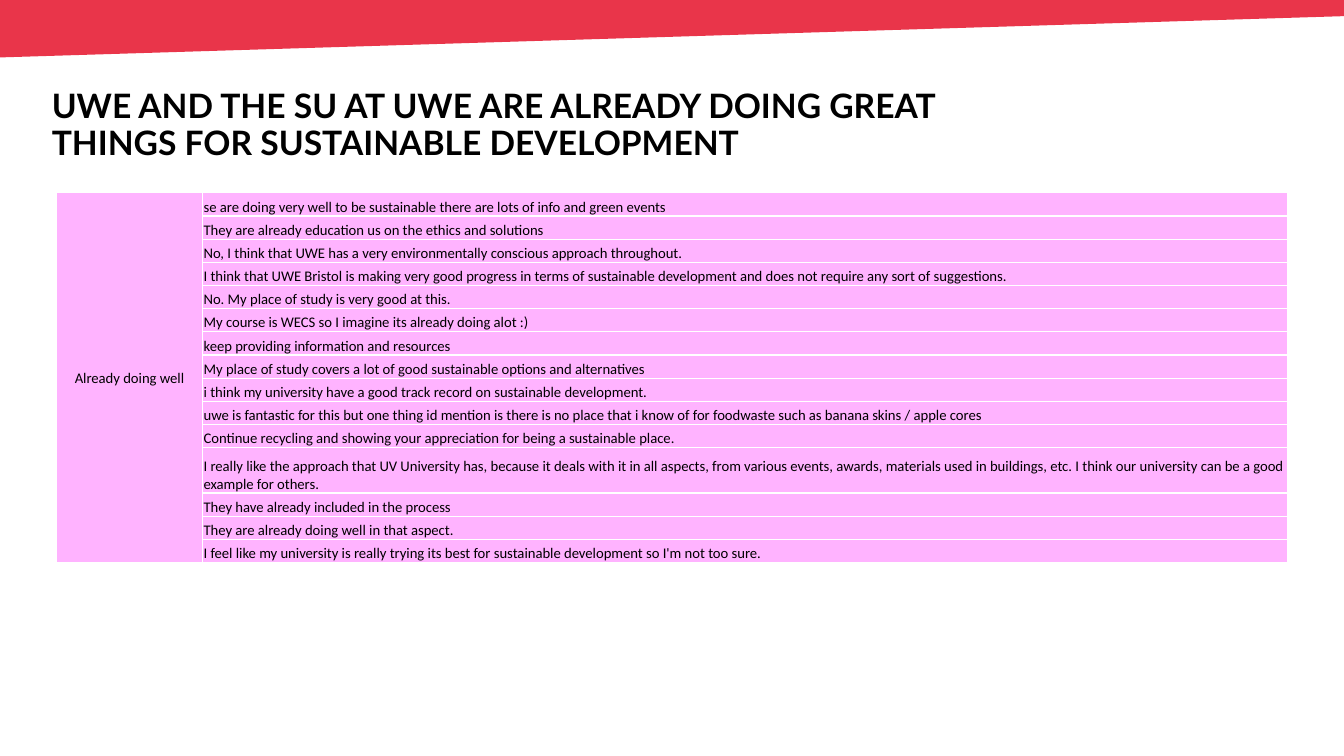
"""Build the slide of comments on what the university already does well."""
from pptx import Presentation
from pptx import util as u
from pptx.dml.color import RGBColor
from pptx.enum import text
from pptx.oxml import parse_xml
from pptx.oxml.ns import nsdecls

WIDTH, HEIGHT = u.Inches(13.33), u.Inches(7.5)
RED = RGBColor(0xE9, 0x35, 0x4A)
PINK = RGBColor(0xFF, 0xB3, 0xFF)
BLACK = RGBColor(0, 0, 0)
WHITE = RGBColor(0xFF, 0xFF, 0xFF)

TITLE = "UWE AND THE SU AT UWE ARE ALREADY DOING GREAT THINGS FOR SUSTAINABLE DEVELOPMENT"
TITLE_FONT = {"name": "Lato", "size": u.Pt(24), "bold": True}
CELL_FONT = {"name": "Calibri", "size": u.Pt(10.5), "bold": False}
CELL_FORMAT = {
    "margin_left": u.Inches(0.01),
    "margin_right": u.Inches(0.01),
    "margin_top": u.Inches(0.01),
    "margin_bottom": 0,
}
BAND_CORNERS = [(-0.01, 0), (0, 0.57), (13.35, 0.16), (13.33, 0)]
COLUMN_WIDTHS = (1.45, 10.76)
ROW_HEIGHT, TALL_ROW_HEIGHT = 0.23, 0.45
LINE_LENGTH = 150

THEME = "Already doing well"
COMMENTS = [
    "se are doing very well to be sustainable there are lots of info and green events",
    "They are already education us on the ethics and solutions",
    "No, I think that UWE has a very environmentally conscious approach throughout.",
    "I think that UWE Bristol is making very good progress in terms of sustainable "
    "development and does not require any sort of suggestions.",
    "No. My place of study is very good at this.",
    "My course is WECS so I imagine its already doing alot :)",
    "keep providing information and resources",
    "My place of study covers a lot of good sustainable options and alternatives",
    "i think my university have a good track record on sustainable development.",
    "uwe is fantastic for this but one thing id mention is there is no place that i know of "
    "for foodwaste such as banana skins / apple cores",
    "Continue recycling and showing your appreciation for being a sustainable place.",
    "I really like the approach that UV University has, because it deals with it in all "
    "aspects, from various events, awards, materials used in buildings, etc. I think our "
    "university can be a good example for others.",
    "They have already included in the process",
    "They are already doing well in that aspect.",
    "I feel like my university is really trying its best for sustainable development so "
    "I'm not too sure.",
]


def apply(target, values):
    """Set every attribute named in a dict of format values."""
    for name, value in values.items():
        setattr(target, name, value)


def write(frame, words, font, align=text.PP_ALIGN.LEFT):
    """Put one formatted paragraph into a text frame."""
    para = frame.paragraphs[0]
    para.alignment = align
    span = para.add_run()
    span.text = words
    apply(span.font, font)
    span.font.color.rgb = BLACK
    return para


def add_band(page):
    """Draw the slanted band along the top edge."""
    corners = [(u.Inches(x), u.Inches(y)) for x, y in BAND_CORNERS]
    builder = page.shapes.build_freeform(*corners[0])
    builder.add_line_segments(corners[1:], close=True)
    band = builder.convert_to_shape()
    band.shadow.inherit = False
    band.fill.solid()
    band.fill.fore_color.rgb = RED
    band.line.fill.background()


def add_title(page):
    """Place and format the title placeholder."""
    title = page.shapes.title
    apply(title, {
        "left": int(WIDTH * 0.031),
        "top": int(HEIGHT * 0.112),
        "width": int(WIDTH * 0.678),
        "height": int(HEIGHT * 0.056),
    })
    apply(title.text_frame, {
        "word_wrap": True,
        "auto_size": text.MSO_AUTO_SIZE.NONE,
        "vertical_anchor": text.MSO_ANCHOR.TOP,
    })
    write(title.text_frame, TITLE, TITLE_FONT).line_spacing = 0.9


def add_borders(cell):
    """Give a cell thin white borders on all sides."""
    properties = cell._tc.get_or_add_tcPr()
    for position, side in enumerate(("lnL", "lnR", "lnT", "lnB")):
        properties.insert(position, parse_xml(
            f'<a:{side} {nsdecls("a")} w="{u.Pt(1)}"><a:solidFill>'
            f'<a:srgbClr val="{WHITE}"/></a:solidFill></a:{side}>'))


def format_cell(cell, anchor):
    """Apply margins, anchor, fill and borders to a cell."""
    apply(cell, {**CELL_FORMAT, "vertical_anchor": anchor})
    cell.fill.solid()
    cell.fill.fore_color.rgb = PINK
    add_borders(cell)


def add_comments(page):
    """Add the table of comments beside one merged theme cell."""
    heights = [TALL_ROW_HEIGHT if len(words) > LINE_LENGTH else ROW_HEIGHT
               for words in COMMENTS]
    frame = page.shapes.add_table(
        len(COMMENTS), len(COLUMN_WIDTHS), int(WIDTH * 0.042), int(HEIGHT * 0.255),
        u.Inches(sum(COLUMN_WIDTHS)), u.Inches(sum(heights)))
    table = frame.table
    apply(table, {"first_row": False, "horz_banding": False})
    for column, width in zip(table.columns, COLUMN_WIDTHS):
        column.width = u.Inches(width)
    for row, height, words in zip(table.rows, heights, COMMENTS):
        row.height = u.Inches(height)
        theme, comment = row.cells
        format_cell(theme, text.MSO_ANCHOR.MIDDLE)
        format_cell(comment, text.MSO_ANCHOR.BOTTOM)
        write(comment.text_frame, words, CELL_FONT)
    first = table.cell(0, 0)
    first.merge(table.cell(len(COMMENTS) - 1, 0))
    write(first.text_frame, THEME, CELL_FONT, text.PP_ALIGN.CENTER)


def main():
    """Build and save the deck."""
    deck = Presentation()
    apply(deck, {"slide_width": WIDTH, "slide_height": HEIGHT})
    page = deck.slides.add_slide(deck.slide_layouts[5])
    add_band(page)
    add_title(page)
    add_comments(page)
    deck.save("out.pptx")


if __name__ == "__main__":
    main()
